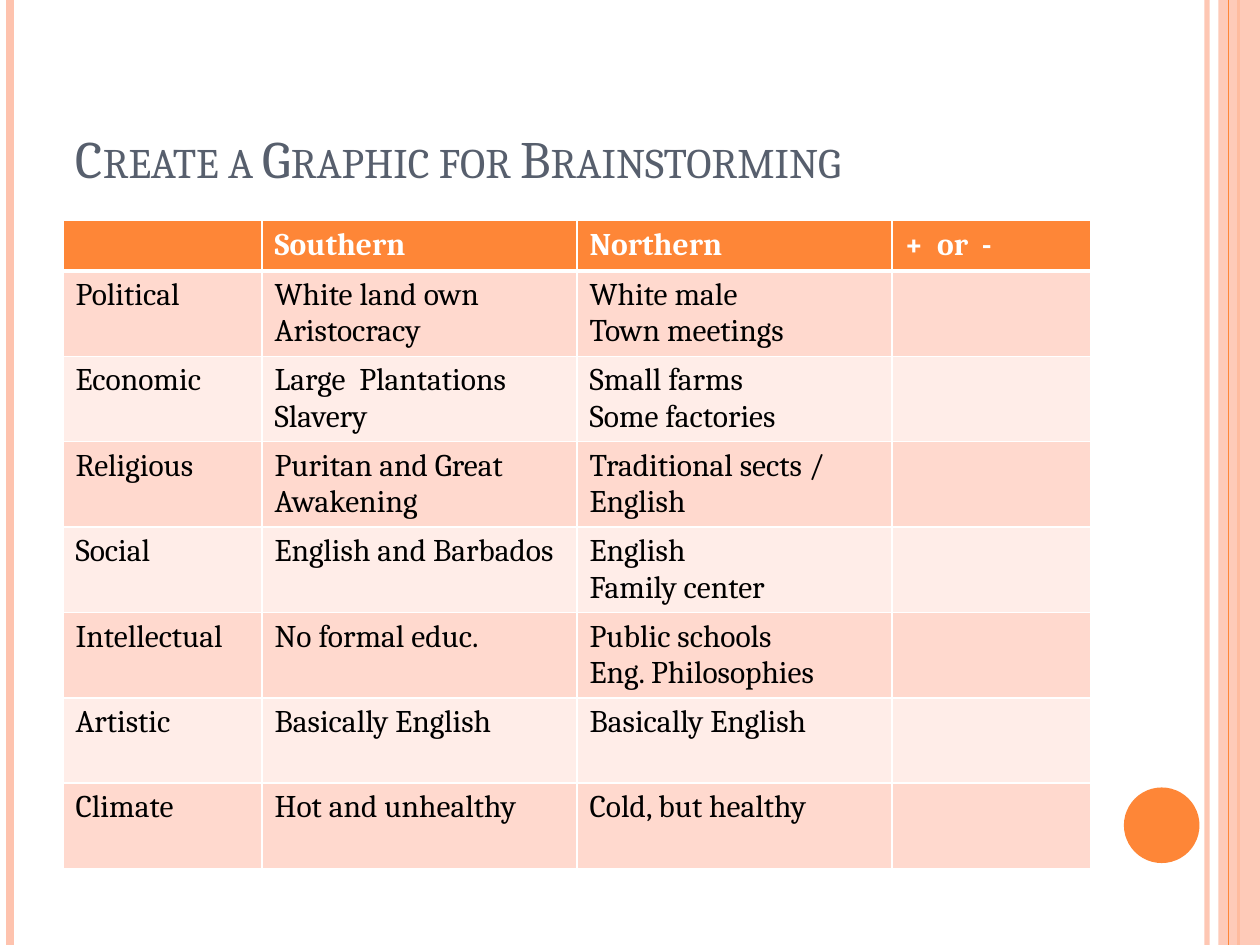
import dataclasses
import typing

import lxml.etree
import pptx
import pptx.dml.color
import pptx.enum.shapes
import pptx.enum.text
import pptx.oxml
import pptx.oxml.ns
import pptx.util

Inches = pptx.util.Inches
Pt = pptx.util.Pt
RGBColor = pptx.dml.color.RGBColor
qn = pptx.oxml.ns.qn

ORANGE = RGBColor(0xFE, 0x86, 0x37)
PEACH = RGBColor(0xFE, 0xC3, 0xAE)
SLATE = RGBColor(0x57, 0x5F, 0x6D)
WHITE = RGBColor(0xFF, 0xFF, 0xFF)
BLACK = RGBColor(0, 0, 0)
BANDS = (RGBColor(0xFF, 0xD9, 0xCE), RGBColor(0xFF, 0xED, 0xE8))
FONT = "Cambria"
HEADER_HEIGHT = 0.4
BODY_HEIGHT = 4.74


@dataclasses.dataclass
class Stripe:
    x: float
    width: float
    color: RGBColor
    opacity: int = 100


@dataclasses.dataclass
class Topic:
    name: str
    southern: str
    northern: str


BACK_STRIPES = (
    Stripe(9.58, 3, PEACH, 93),
    Stripe(0.08, 4.5, PEACH),
    Stripe(9.83, 1.5, ORANGE),
)
FRONT_STRIPE = Stripe(9.75, 0.75, ORANGE)
HEADINGS = ("", "Southern", "Northern", "+  or  -")
COLUMN_WIDTHS = (1.58, 2.5, 2.5, 1.58)
TOPICS = (
    Topic("Political", "White land own\nAristocracy", "White male\nTown meetings"),
    Topic("Economic", "Large  Plantations\nSlavery", "Small farms\nSome factories"),
    Topic("Religious", "Puritan and Great Awakening", "Traditional sects / English"),
    Topic("Social", "English and Barbados", "English\nFamily center"),
    Topic("Intellectual", "No formal educ.", "Public schools\nEng. Philosophies"),
    Topic("Artistic", "Basically English", "Basically English"),
    Topic("Climate", "Hot and unhealthy", "Cold, but healthy"),
)


def set_opacity(shape: typing.Any, percent: int) -> None:
    for color in shape._element.spPr.iter(qn("a:srgbClr")):
        alpha = lxml.etree.SubElement(color, qn("a:alpha"))
        alpha.set("val", str(percent * 1000))


def draw_stripe(page: typing.Any, stripe: Stripe) -> None:
    line = page.shapes.add_connector(
        pptx.enum.shapes.MSO_CONNECTOR.STRAIGHT,
        Inches(stripe.x), 0, Inches(stripe.x), Inches(7.5),
    )
    line.line.color.rgb = stripe.color
    line.line.width = Pt(stripe.width)
    if stripe.opacity < 100:
        set_opacity(line, stripe.opacity)
    lxml.etree.SubElement(line._element.spPr, qn("a:effectLst"))


def draw_shape(page: typing.Any, kind: typing.Any, bounds: tuple, color: RGBColor) -> typing.Any:
    shape = page.shapes.add_shape(kind, *map(Inches, bounds))
    shape.shadow.inherit = False
    shape.fill.solid()
    shape.fill.fore_color.rgb = color
    shape.line.fill.background()
    return shape


def draw_title(page: typing.Any, text: str) -> None:
    title = page.shapes.title
    title.left, title.top = Inches(0.5), Inches(0.3)
    title.width, title.height = Inches(8.17), Inches(1.25)
    frame = title.text_frame
    frame.text = text
    frame.vertical_anchor = pptx.enum.text.MSO_ANCHOR.BOTTOM
    para = frame.paragraphs[0]
    para.alignment = pptx.enum.text.PP_ALIGN.LEFT
    para.font.name = FONT
    para.font.size = Pt(30)
    para.font.color.rgb = SLATE
    para.runs[0].font._element.set("cap", "small")


def set_borders(cell: typing.Any, top: float, bottom: float) -> None:
    properties = cell._tc.get_or_add_tcPr()
    for side, width in (("L", 1), ("R", 1), ("T", top), ("B", bottom)):
        line = lxml.etree.SubElement(properties, qn(f"a:ln{side}"))
        line.set("w", str(Pt(width)))
        fill = lxml.etree.SubElement(line, qn("a:solidFill"))
        lxml.etree.SubElement(fill, qn("a:srgbClr")).set("val", str(WHITE))


def fill_cell(cell: typing.Any, text: str, row: int) -> None:
    header = row == 0
    set_borders(cell, 3 if row == 1 else 1, 3 if header else 1)
    cell.fill.solid()
    cell.fill.fore_color.rgb = ORANGE if header else BANDS[(row - 1) % 2]
    cell.text = text
    for para in cell.text_frame.paragraphs:
        para.font.name = FONT
        para.font.size = Pt(18)
        para.font.bold = header
        para.font.color.rgb = WHITE if header else BLACK


def draw_table(page: typing.Any) -> None:
    rows = [HEADINGS] + [(topic.name, topic.southern, topic.northern, "") for topic in TOPICS]
    table = page.shapes.add_table(
        len(rows), len(HEADINGS), Inches(0.5), Inches(1.75),
        Inches(sum(COLUMN_WIDTHS)), Inches(HEADER_HEIGHT + BODY_HEIGHT),
    ).table
    for column, width in zip(table.columns, COLUMN_WIDTHS):
        column.width = Inches(width)
    for index, texts in enumerate(rows):
        height = BODY_HEIGHT / len(TOPICS) if index else HEADER_HEIGHT
        table.rows[index].height = Inches(height)
        for cell, text in zip(table.rows[index].cells, texts):
            fill_cell(cell, text, index)


def main() -> None:
    deck = pptx.Presentation()
    deck.slide_width, deck.slide_height = Inches(10), Inches(7.5)
    page = deck.slides.add_slide(deck.slide_layouts[5])
    shapes = pptx.enum.shapes.MSO_SHAPE
    for stripe in BACK_STRIPES:
        draw_stripe(page, stripe)
    band = draw_shape(page, shapes.RECTANGLE, (9.67, 0, 0.33, 7.5), PEACH)
    set_opacity(band, 87)
    draw_stripe(page, FRONT_STRIPE)
    draw_shape(page, shapes.OVAL, (8.92, 6.25, 0.6, 0.6), ORANGE)
    draw_title(page, "Create a Graphic for Brainstorming")
    draw_table(page)
    deck.save("out.pptx")


if __name__ == "__main__":
    main()
